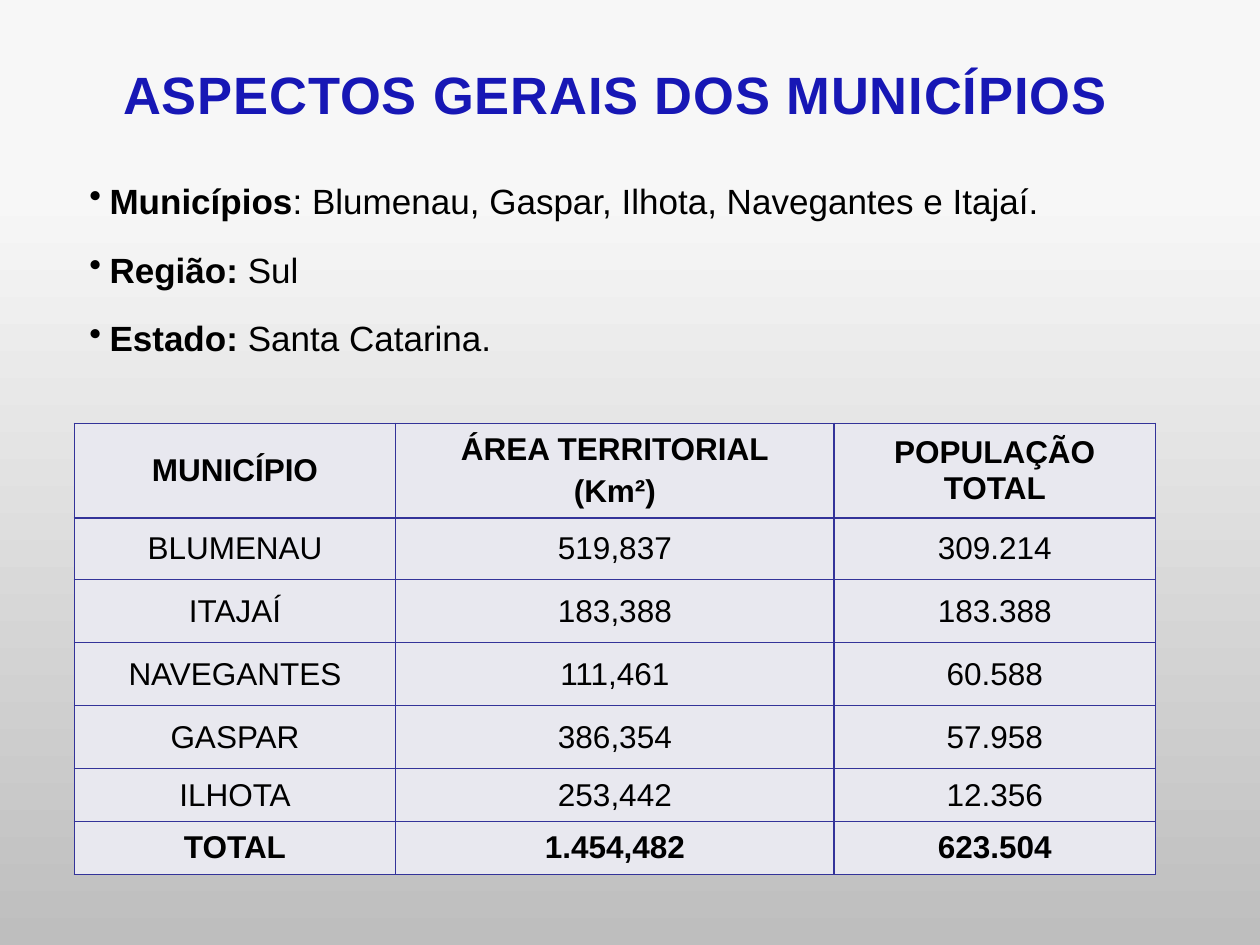
"""Build a slide with the general aspects of the municipalities."""
import lxml.etree
import pptx
import pptx.dml.color
import pptx.enum.shapes
import pptx.enum.text
import pptx.oxml
import pptx.oxml.ns
import pptx.util

Inches, Pt = pptx.util.Inches, pptx.util.Pt
ALIGN = pptx.enum.text.PP_ALIGN
MIDDLE = pptx.enum.text.MSO_ANCHOR.MIDDLE
NS = pptx.oxml.ns.nsdecls("a")

FACTS = [
    ("Municípios", ": Blumenau, Gaspar, Ilhota, Navegantes e Itajaí."),
    ("Região:", " Sul"),
    ("Estado:", " Santa Catarina."),
]
ROWS = [
    ("MUNICÍPIO", "ÁREA TERRITORIAL\n(Km²)", "POPULAÇÃO TOTAL"),
    ("BLUMENAU", "519,837", "309.214"),
    ("ITAJAÍ", "183,388", "183.388"),
    ("NAVEGANTES", "111,461", "60.588"),
    ("GASPAR", "386,354", "57.958"),
    ("ILHOTA", "253,442", "12.356"),
    ("TOTAL", "1.454,482", "623.504"),
]
COL_WIDTHS = [2.55, 3.48, 2.55]
ROW_HEIGHTS = [0.71, 0.49, 0.5, 0.5, 0.5, 0.42, 0.42]


def rgb(color):
    """Turn a hex string into a colour."""
    return pptx.dml.color.RGBColor.from_string(color)


def add_run(p, text, size=18, color="000000", bold=False, spacing=0):
    """Add a formatted run to a paragraph."""
    r = p.add_run()
    r.text = text
    r.font.name = "Arial"
    r.font.size = Pt(size)
    r.font.bold = bold
    r.font.color.rgb = rgb(color)
    if spacing:
        r.font._element.set("spc", str(int(spacing * 100)))


def add_backdrop(s, width, height, stops):
    """Put a full-slide rectangle with a vertical gradient behind everything."""
    sp = s.shapes.add_shape(pptx.enum.shapes.MSO_SHAPE.RECTANGLE, 0, 0, width, height)
    sp.shadow.inherit = False
    sp.line.fill.background()
    sp.fill.gradient()
    sp.fill.gradient_angle = 90
    gs_lst = sp._element.spPr.find(".//" + pptx.oxml.ns.qn("a:gsLst"))
    for gs in list(gs_lst):
        gs_lst.remove(gs)
    for pos, color in stops:
        gs_lst.append(pptx.oxml.parse_xml(
            f'<a:gs {NS} pos="{pos * 1000}"><a:srgbClr val="{color}"/></a:gs>'))
    s.shapes._spTree.insert(2, sp._element)


def add_title(s, text):
    """Place and format the title."""
    sp = s.shapes.title
    sp.left, sp.top, sp.width, sp.height = map(Inches, (0.75, 0.44, 8.27, 0.61))
    tf = sp.text_frame
    tf.word_wrap = True
    tf.auto_size = pptx.enum.text.MSO_AUTO_SIZE.NONE
    tf.vertical_anchor = MIDDLE
    p = tf.paragraphs[0]
    p.alignment = ALIGN.CENTER
    add_run(p, text, size=30, color="1717B5", bold=True, spacing=0.5)


def set_bullet(p, indent):
    """Give a paragraph a hanging round bullet."""
    pPr = p._p.get_or_add_pPr()
    pPr.set("marL", str(Inches(indent)))
    pPr.set("indent", str(-Inches(indent)))
    bullet = lxml.etree.SubElement(pPr, pptx.oxml.ns.qn("a:buChar"))
    bullet.set("char", "•")


def add_facts(s, facts):
    """Add the bulleted list of labelled facts."""
    sp = s.shapes.add_textbox(*map(Inches, (0.51, 1.39, 8.97, 1.65)))
    tf = sp.text_frame
    tf.word_wrap = True
    tf.margin_left, tf.margin_top = Inches(0.2), Inches(0.1)
    for i, (label, value) in enumerate(facts):
        p = tf.add_paragraph() if i else tf.paragraphs[0]
        p.line_spacing = 0.8
        p.space_after = Pt(20)
        set_bullet(p, 0.16)
        add_run(p, label, size=20, bold=True)
        add_run(p, value, size=20)


def set_borders(cell, color, width):
    """Draw all four borders of a cell."""
    tcPr = cell._tc.get_or_add_tcPr()
    for i, side in enumerate(("lnL", "lnR", "lnT", "lnB")):
        tcPr.insert(i, pptx.oxml.parse_xml(
            f'<a:{side} {NS} w="{Pt(width)}"><a:solidFill>'
            f'<a:srgbClr val="{color}"/></a:solidFill></a:{side}>'))


def fill_cell(cell, text, bold):
    """Write and format one table cell."""
    cell.fill.solid()
    cell.fill.fore_color.rgb = rgb("E8E8EF")
    cell.vertical_anchor = MIDDLE
    set_borders(cell, "333399", 1)
    tf = cell.text_frame
    for i, line in enumerate(text.split("\n")):
        p = tf.add_paragraph() if i else tf.paragraphs[0]
        p.alignment = ALIGN.CENTER
        p.space_before = Pt(3.6)
        add_run(p, line, bold=bold)


def add_data_table(s, rows):
    """Add the table with bold first and last rows."""
    size = sum(COL_WIDTHS), sum(ROW_HEIGHTS)
    frame = s.shapes.add_table(len(rows), len(COL_WIDTHS),
                               *map(Inches, (0.59, 3.36, *size)))
    table = frame.table
    table.first_row = table.horz_banding = False
    for col, width in zip(table.columns, COL_WIDTHS):
        col.width = Inches(width)
    for i, (row, height, texts) in enumerate(zip(table.rows, ROW_HEIGHTS, rows)):
        row.height = Inches(height)
        for cell, text in zip(row.cells, texts):
            fill_cell(cell, text, bold=i in (0, len(rows) - 1))


def main():
    """Build and save the slide."""
    prs = pptx.Presentation()
    prs.slide_width, prs.slide_height = Inches(10), Inches(7.5)
    s = prs.slides.add_slide(prs.slide_layouts[5])
    add_backdrop(s, prs.slide_width, prs.slide_height,
                 [(0, "BEBEBE"), (80, "F7F7F7"), (100, "F8F8F8")])
    add_title(s, "ASPECTOS GERAIS DOS MUNICÍPIOS")
    add_facts(s, FACTS)
    add_data_table(s, ROWS)
    prs.save("out.pptx")


if __name__ == "__main__":
    main()
